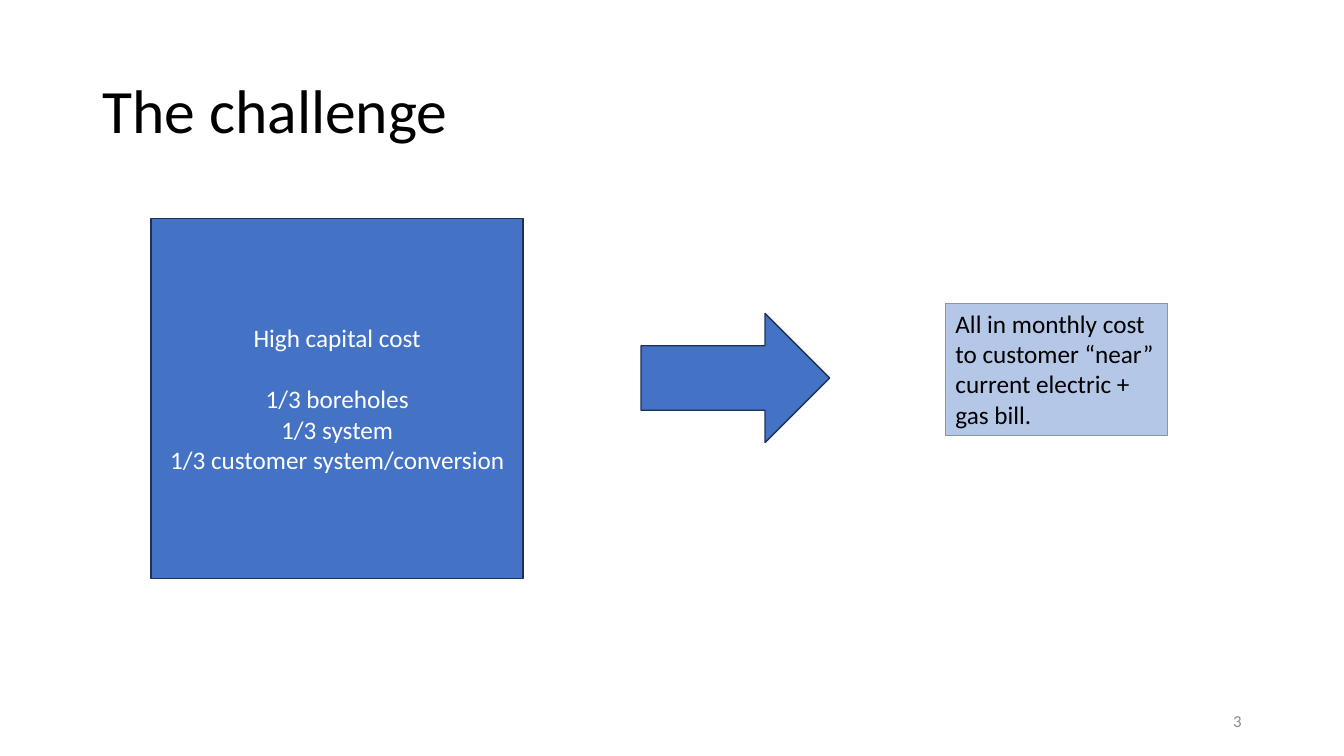
import dataclasses
import typing

import pptx
import pptx.dml.color
import pptx.enum.shapes
import pptx.enum.text
import pptx.util

Align = pptx.enum.text.PP_ALIGN
Anchor = pptx.enum.text.MSO_ANCHOR
Preset = pptx.enum.shapes.MSO_SHAPE


@dataclasses.dataclass(frozen=True)
class Theme:
    font: str = "Calibri"
    title_size: float = 44
    body_size: float = 18
    number_size: float = 12
    dark: str = "000000"
    light: str = "FFFFFF"
    muted: str = "8C8C8C"
    accent: str = "4472C4"
    accent_line: str = "1E3256"
    pale: str = "B4C7E7"
    pale_line: str = "8497B0"


@dataclasses.dataclass(frozen=True)
class Area:
    left: float
    top: float
    width: float
    height: float


@dataclasses.dataclass(frozen=True)
class Block:
    area: Area
    preset: Preset
    fill: str
    line: str
    line_width: float


THEME = Theme()
SLIDE_WIDTH = pptx.util.Inches(13.33)
SLIDE_HEIGHT = pptx.util.Inches(7.5)

TITLE_AREA = Area(6.88, 5.32, 86.25, 19.33)
NUMBER_AREA = Area(70.63, 92.67, 22.5, 5.33)
COST_BLOCK = Block(Area(11.25, 28.93, 27.68, 47.6), Preset.RECTANGLE,
                   THEME.accent, THEME.accent_line, 1)
BILL_BLOCK = Block(Area(70.35, 40.13, 16.5, 17.47), Preset.RECTANGLE,
                   THEME.pale, THEME.pale_line, 0.75)
ARROW_BLOCK = Block(Area(47.7, 41.47, 14.03, 17.07), Preset.RIGHT_ARROW,
                    THEME.accent, THEME.accent_line, 1)

COST_HEADING = "High capital cost"
COST_SHARES = ["1/3 boreholes", "1/3 system", "1/3 customer system/conversion"]
BILL_TEXT = "All in monthly cost to customer “near” current electric + gas bill."


def place(area: Area) -> tuple[int, int, int, int]:
    return (
        int(SLIDE_WIDTH * area.left / 100),
        int(SLIDE_HEIGHT * area.top / 100),
        int(SLIDE_WIDTH * area.width / 100),
        int(SLIDE_HEIGHT * area.height / 100),
    )


def color(value: str) -> pptx.dml.color.RGBColor:
    return pptx.dml.color.RGBColor.from_string(value)


def draw_block(slide: typing.Any, block: Block) -> typing.Any:
    shape = slide.shapes.add_shape(block.preset, *place(block.area))
    shape.shadow.inherit = False
    shape.fill.solid()
    shape.fill.fore_color.rgb = color(block.fill)
    shape.line.color.rgb = color(block.line)
    shape.line.width = pptx.util.Pt(block.line_width)
    return shape


def write_text(
    shape: typing.Any,
    lines: list[str],
    *,
    size: float = THEME.body_size,
    ink: str = THEME.dark,
    align: Align = Align.LEFT,
    anchor: Anchor = Anchor.MIDDLE,
    line_spacing: float = 1.0,
    heading_gap: float = 0,
) -> None:
    frame = shape.text_frame
    frame.word_wrap = True
    frame.vertical_anchor = anchor
    frame.text = "\n".join(lines)
    for paragraph in frame.paragraphs:
        paragraph.alignment = align
        paragraph.line_spacing = line_spacing
        font = paragraph.runs[0].font
        font.name = THEME.font
        font.size = pptx.util.Pt(size)
        font.color.rgb = color(ink)
    frame.paragraphs[0].space_after = pptx.util.Pt(heading_gap)


def build_slide(presentation: typing.Any) -> None:
    slide = presentation.slides.add_slide(presentation.slide_layouts[6])

    title = slide.shapes.add_textbox(*place(TITLE_AREA))
    write_text(title, ["The challenge"], size=THEME.title_size, line_spacing=0.9)

    cost = draw_block(slide, COST_BLOCK)
    write_text(cost, [COST_HEADING, *COST_SHARES], ink=THEME.light,
               align=Align.CENTER, heading_gap=22)

    bill = draw_block(slide, BILL_BLOCK)
    write_text(bill, [BILL_TEXT], anchor=Anchor.TOP)
    bill.text_frame.auto_size = pptx.enum.text.MSO_AUTO_SIZE.SHAPE_TO_FIT_TEXT

    draw_block(slide, ARROW_BLOCK)

    number = slide.shapes.add_textbox(*place(NUMBER_AREA))
    write_text(number, ["3"], size=THEME.number_size, ink=THEME.muted,
               align=Align.RIGHT)


def main() -> None:
    presentation = pptx.Presentation()
    presentation.slide_width = SLIDE_WIDTH
    presentation.slide_height = SLIDE_HEIGHT
    build_slide(presentation)
    presentation.save("out.pptx")


if __name__ == "__main__":
    main()
